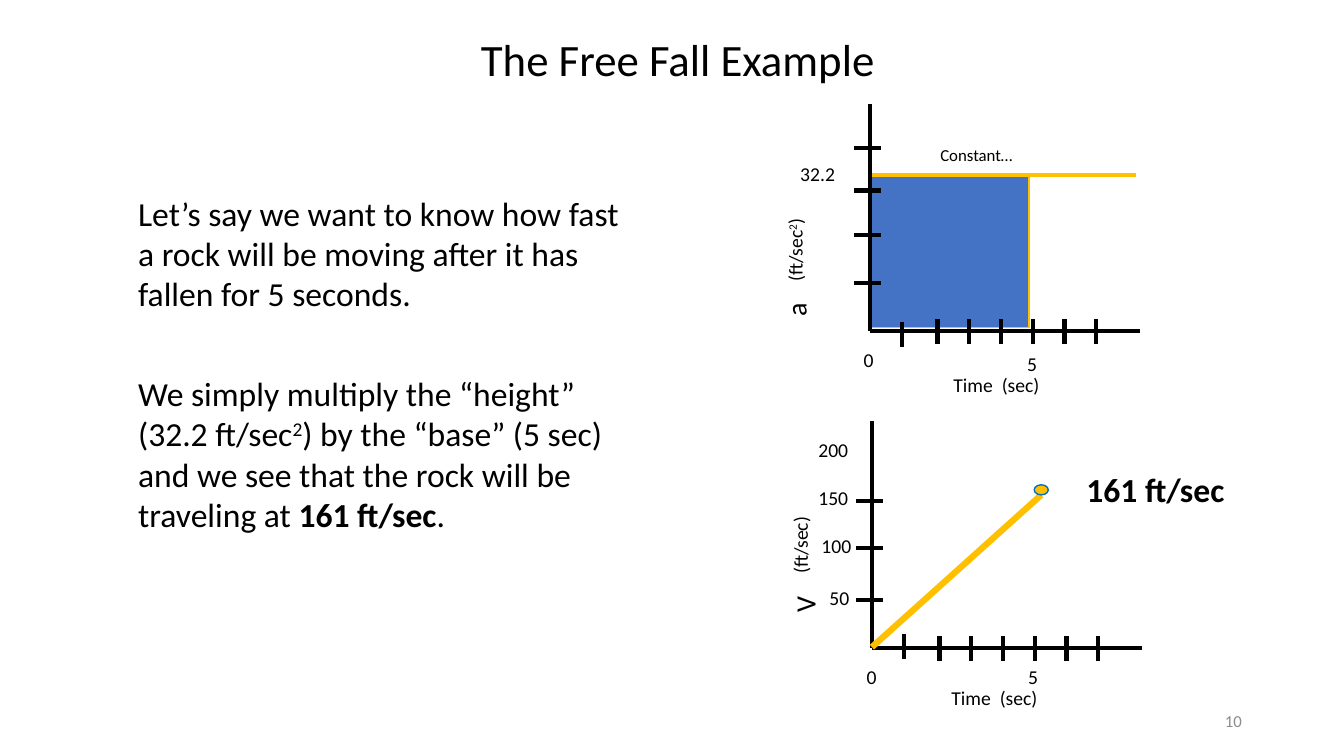
from dataclasses import dataclass
from typing import Any

from lxml.etree import SubElement
from pptx import Presentation
from pptx.dml.color import RGBColor
from pptx.enum.shapes import MSO_CONNECTOR as CONN, MSO_SHAPE as SHAPE
from pptx.enum.text import MSO_ANCHOR as ANCHOR, MSO_AUTO_SIZE as AUTO, PP_ALIGN as ALIGN
from pptx.oxml.ns import qn
from pptx.shapes.shapetree import GroupShapes
from pptx.util import Inches, Pt

BLACK = RGBColor(0x00, 0x00, 0x00)
GREY = RGBColor(0x8C, 0x8C, 0x8C)
BLUE = RGBColor(0x44, 0x72, 0xC4)
GOLD = RGBColor(0xFF, 0xC0, 0x00)
RIM = RGBColor(0x00, 0x70, 0xC0)

CELL = Inches(0.1)
COLS, ROWS = 133.33, 75
AXIS_WIDTH, AXIS_HEIGHT = 26.8, 22.5
FIRST_TICK, NEXT_TICK, TICK_STEP, LATER_TICKS = 3.2, 6.7, 3.15, 6


@dataclass
class Run:
    text: str
    bold: bool = False
    raised: bool = False


@dataclass
class Box:
    col: float
    row: float
    cols: float
    rows: float


@dataclass
class Label:
    runs: list[Run]
    box: Box
    size: float = 14
    turn: float = 0
    align: ALIGN = ALIGN.LEFT
    color: RGBColor = BLACK
    anchor: ANCHOR = ANCHOR.TOP


@dataclass
class Plot:
    col: float
    row: float
    y_ticks: list[float]
    first_tick_drop: float
    labels: list[Label]


def cells(*values: float) -> list[int]:
    return [round(v * CELL) for v in values]


def place(s: Any, box: Box) -> None:
    s.left, s.top, s.width, s.height = cells(box.col, box.row, box.cols, box.rows)


def write(s: Any, label: Label) -> None:
    place(s, label.box)
    s.rotation = label.turn
    tf = s.text_frame
    frame = {"word_wrap": True, "auto_size": AUTO.NONE, "vertical_anchor": label.anchor}
    for name, value in frame.items():
        setattr(tf, name, value)
    p = tf.paragraphs[0]
    for name, value in {"alignment": label.align, "space_before": Pt(0)}.items():
        setattr(p, name, value)
    for part in label.runs:
        r = p.add_run()
        r.text = part.text
        font = {"name": "Calibri", "size": Pt(label.size), "bold": part.bold}
        for name, value in font.items():
            setattr(r.font, name, value)
        r.font.color.rgb = label.color
        if part.raised:
            r._r.get_or_add_rPr().set("baseline", "30000")


def add_label(shapes: Any, label: Label) -> None:
    write(shapes.add_textbox(0, 0, CELL, CELL), label)


def add_line(shapes: GroupShapes, x1: float, y1: float, x2: float, y2: float,
             color: RGBColor = BLACK, width: float = 3) -> None:
    s = shapes.add_connector(CONN.STRAIGHT, *cells(x1, y1, x2, y2))
    s.line.color.rgb = color
    s.line.width = Pt(width)
    SubElement(s.element.spPr, qn("a:effectLst"))


def add_mark(shapes: GroupShapes, kind: SHAPE, box: Box, fill: RGBColor, line: RGBColor) -> None:
    s = shapes.add_shape(kind, 0, 0, CELL, CELL)
    place(s, box)
    s.shadow.inherit = False
    s.fill.solid()
    s.fill.fore_color.rgb = fill
    s.line.color.rgb = line
    s.line.width = Pt(1)


def add_axes(shapes: GroupShapes, plot: Plot) -> None:
    x, y = plot.col, plot.row
    add_line(shapes, x + AXIS_WIDTH, y, x, y)
    add_line(shapes, x, y - AXIS_HEIGHT, x, y)
    for rise in plot.y_ticks:
        add_line(shapes, x + 1.1, y - rise, x - 1.6, y - rise)
    ticks = [(FIRST_TICK, plot.first_tick_drop)]
    ticks += [(NEXT_TICK + i * TICK_STEP, 0) for i in range(LATER_TICKS)]
    for run, drop in ticks:
        add_line(shapes, x + run, y + 1.3 + drop, x + run, y - 1.2 + drop)
    for label in plot.labels:
        add_label(shapes, label)


TITLE = Label([Run("The Free Fall Example")], Box(25.3, 2.6, 83.9, 6.4), 32, align=ALIGN.CENTER)
PAGE = Label([Run("10")], Box(94.2, 69.5, 30, 4), 12,
             align=ALIGN.RIGHT, color=GREY, anchor=ANCHOR.MIDDLE)
RESULT = Label([Run("161 ft/sec", bold=True)], Box(106.8, 46, 19.6, 5), 24)
QUESTION = Label(
    [Run("Let’s say we want to know how fast a rock will be moving after it has "
         "fallen for 5 seconds.")],
    Box(12.7, 18.6, 51, 13.1), 24)
ANSWER = Label(
    [Run("We simply multiply the “height” (32.2 ft/sec"), Run("2", raised=True),
     Run(") by the “base” (5 sec) and we see that the rock will be traveling at "),
     Run("161 ft/sec", bold=True), Run(".")],
    Box(12.7, 36.5, 49.1, 17.2), 24)

ACCELERATION = Plot(86.3, 32.8, [4.7, 9.5, 13.9, 18.1], 0.3, [
    Label([Run("32.2")], Box(78.4, 15.6, 11, 3.4)),
    Label([Run("0")], Box(84.7, 34, 5.5, 3.4)),
    Label([Run("5")], Box(100.9, 34.4, 5.5, 3.4)),
    Label([Run("a")], Box(77, 28.2, 3.9, 4.4), 20, 270),
    Label([Run("(ft/sec"), Run("2", raised=True), Run(")")], Box(73.9, 22.2, 10, 3.4), turn=270),
    Label([Run("Time  (sec)")], Box(93.6, 36.5, 14.8, 3.4)),
    Label([Run("Constant…")], Box(92.3, 13.9, 16.1, 3), 12),
])
VELOCITY = Plot(86.5, 64.3, [4.8, 9.9, 14.6], -0.2, [
    Label([Run("50")], Box(81.3, 57.6, 5.5, 3.4)),
    Label([Run("100")], Box(80.5, 52.5, 5.5, 3.4)),
    Label([Run("150")], Box(80.2, 47.7, 5.5, 3.4)),
    Label([Run("200")], Box(80.2, 43, 5.5, 3.4)),
    Label([Run("0")], Box(85, 65.5, 5.5, 3.4)),
    Label([Run("5")], Box(101, 65.5, 5.5, 3.4)),
    Label([Run("V")], Box(77.9, 57.6, 3.9, 4.4), 20, 270),
    Label([Run("(ft/sec)")], Box(75.1, 51.9, 8.6, 3.4), turn=270),
    Label([Run("Time  (sec)")], Box(93.4, 67.6, 13.5, 3.4)),
])


def main() -> None:
    prs = Presentation()
    prs.slide_width, prs.slide_height = cells(COLS, ROWS)
    slide = prs.slides.add_slide(prs.slide_layouts[3])
    title, question, answer = slide.placeholders
    write(title, TITLE)
    for s, label in ((question, QUESTION), (answer, ANSWER)):
        write(s, label)
        pPr = s.text_frame.paragraphs[0]._p.get_or_add_pPr()
        for name in ("marL", "indent"):
            pPr.set(name, "0")
        SubElement(pPr, qn("a:buNone"))
    add_label(slide.shapes, PAGE)
    add_label(slide.shapes, RESULT)

    upper = slide.shapes.add_group_shape().shapes
    add_mark(upper, SHAPE.RECTANGLE, Box(86.2, 17.4, 15.9, 15.1), BLUE, GOLD)
    add_line(upper, 112.7, 17.4, 86.1, 17.4, GOLD)
    add_axes(upper, ACCELERATION)

    lower = slide.shapes.add_group_shape().shapes
    add_axes(lower, VELOCITY)
    add_line(lower, 86.5, 64.2, 103.3, 49.1, GOLD, 4.5)
    add_mark(lower, SHAPE.OVAL, Box(102.6, 48.1, 1.4, 1), GOLD, RIM)
    prs.save("out.pptx")


if __name__ == "__main__":
    main()
